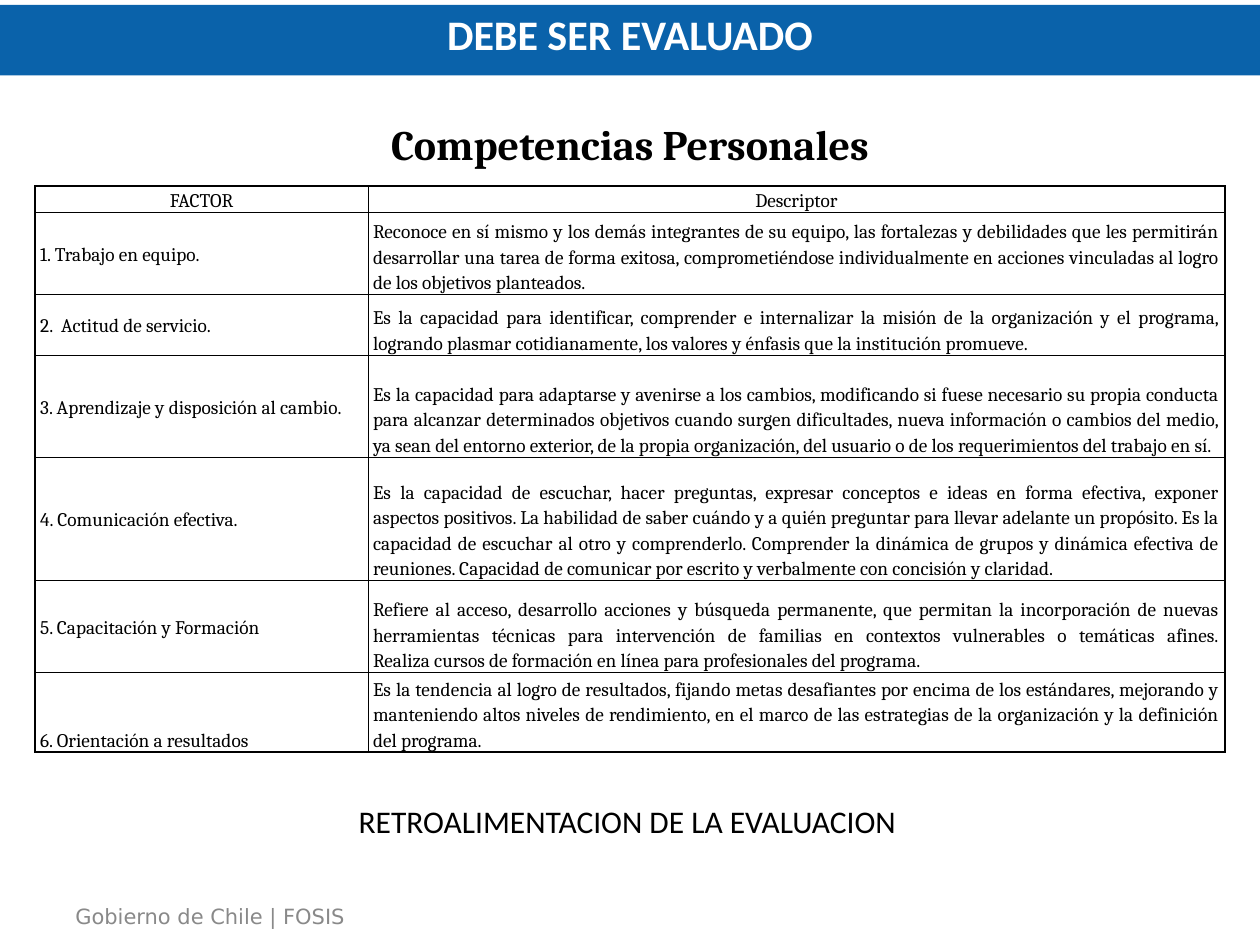
"""Build the slide of personal competencies to be evaluated."""
import copy
import dataclasses

import lxml.etree
import pptx
import pptx.dml.color
import pptx.enum.shapes
import pptx.enum.text
import pptx.oxml.ns
import pptx.util

Cm = pptx.util.Cm
Align = pptx.enum.text.PP_ALIGN
Anchor = pptx.enum.text.MSO_ANCHOR
qualified = pptx.oxml.ns.qn


@dataclasses.dataclass(frozen=True)
class Theme:
    black: str = "000000"
    white: str = "FFFFFF"
    blue: str = "0A62AA"
    gray: str = "898989"
    serif: str = "Cambria"
    sans: str = "Calibri"
    footer_font: str = "DejaVu Sans"
    heading_size: float = 24
    note_size: float = 18
    footer_size: float = 12
    table_size: float = 11
    thick_line: float = 1
    thin_line: float = 0.5


@dataclasses.dataclass(frozen=True)
class Box:
    left: float
    top: float
    width: float
    height: float

    def lengths(self) -> list:
        return [Cm(value) for value in dataclasses.astuple(self)]


@dataclasses.dataclass(frozen=True)
class Competency:
    factor: str
    descriptor: str
    height: float
    factor_align: Align = Align.JUSTIFY
    factor_anchor: Anchor = Anchor.MIDDLE
    descriptor_align: Align = Align.JUSTIFY


THEME = Theme()
COLUMN_WIDTHS = (6.71, 17.27)
THICK_RULES = (0, 1, 6, 7)
COMPETENCIES = (
    Competency("FACTOR", "Descriptor", 0.46, Align.CENTER, Anchor.BOTTOM, Align.CENTER),
    Competency(
        "1. Trabajo en equipo.",
        "Reconoce en sí mismo y los demás integrantes de su equipo, las fortalezas y debilidades "
        "que les permitirán desarrollar una tarea de forma exitosa, comprometiéndose "
        "individualmente en acciones vinculadas al logro de los objetivos planteados.", 1.65),
    Competency(
        "2.  Actitud de servicio.",
        "Es la capacidad para identificar, comprender e internalizar la misión de la organización "
        "y el programa, logrando plasmar cotidianamente, los valores y énfasis que la institución "
        "promueve.", 1.22),
    Competency(
        "3. Aprendizaje y disposición al cambio.",
        "Es la capacidad para adaptarse y avenirse a los cambios, modificando si fuese necesario "
        "su propia conducta para alcanzar determinados objetivos cuando surgen dificultades, nueva "
        "información o cambios del medio, ya sean del entorno exterior, de la propia organización, "
        "del usuario o de los requerimientos del trabajo en sí.", 2.06),
    Competency(
        "4. Comunicación efectiva.",
        "Es la capacidad de escuchar, hacer preguntas, expresar conceptos e ideas en forma "
        "efectiva, exponer aspectos positivos. La habilidad de saber cuándo y a quién preguntar "
        "para llevar adelante un propósito. Es la capacidad de escuchar al otro y comprenderlo. "
        "Comprender la dinámica de grupos y dinámica efectiva de reuniones. Capacidad de comunicar "
        "por escrito y verbalmente con concisión y claridad.", 2.49),
    Competency(
        "5. Capacitación y Formación",
        "Refiere al acceso, desarrollo acciones y búsqueda permanente, que permitan la "
        "incorporación de nuevas herramientas técnicas para intervención de familias en contextos "
        "vulnerables o temáticas afines.\n"
        "Realiza cursos de formación en línea para profesionales del programa.", 1.85),
    Competency(
        "6. Orientación a resultados",
        "Es la tendencia al logro de resultados, fijando metas desafiantes por encima de los "
        "estándares, mejorando y manteniendo altos niveles de rendimiento, en el marco de las "
        "estrategias de la organización y la definición del programa.", 1.5,
        Align.LEFT, Anchor.BOTTOM),
)


def write_text(frame, text: str, *, font: str, size: float, color: str = THEME.black,
               bold: bool = False, align: Align = Align.LEFT, spacing: float = 1.0) -> None:
    paragraph = frame.paragraphs[0]
    paragraph.text = text
    paragraph.alignment = align
    paragraph.line_spacing = spacing
    for run in paragraph.runs:
        run.font.name = font
        run.font.size = pptx.util.Pt(size)
        run.font.bold = bold
        run.font.color.rgb = pptx.dml.color.RGBColor.from_string(color)
    for line_break in paragraph._p.findall(qualified("a:br")):
        line_break.append(copy.deepcopy(paragraph.runs[0]._r.rPr))


def add_text_box(slide, box: Box, text: str, *, wrap: bool = False,
                 anchor: Anchor = Anchor.TOP, **text_format) -> None:
    frame = slide.shapes.add_textbox(*box.lengths()).text_frame
    frame.word_wrap = wrap
    frame.vertical_anchor = anchor
    write_text(frame, text, **text_format)


def add_banner(slide, box: Box, text: str) -> None:
    shape = slide.shapes.add_shape(pptx.enum.shapes.MSO_SHAPE.RECTANGLE, *box.lengths())
    shape.shadow.inherit = False
    shape.fill.solid()
    shape.fill.fore_color.rgb = pptx.dml.color.RGBColor.from_string(THEME.blue)
    shape.line.fill.background()
    frame = shape.text_frame
    frame.word_wrap = True
    frame.vertical_anchor = Anchor.TOP
    frame.margin_left = frame.margin_right = Cm(0.15)
    frame.margin_top = frame.margin_bottom = Cm(0.08)
    write_text(frame, text, font=THEME.sans, size=THEME.heading_size, color=THEME.white,
               bold=True, align=Align.CENTER)


def set_borders(cell, row: int, column: int) -> None:
    properties = cell._tc.get_or_add_tcPr()
    thick_edges = {"lnL": column == 0, "lnR": column == 1,
                   "lnT": row in THICK_RULES, "lnB": row + 1 in THICK_RULES}
    for edge, thick in thick_edges.items():
        width = pptx.util.Pt(THEME.thick_line if thick else THEME.thin_line)
        line = lxml.etree.SubElement(properties, qualified(f"a:{edge}"), w=str(int(width)))
        fill = lxml.etree.SubElement(line, qualified("a:solidFill"))
        lxml.etree.SubElement(fill, qualified("a:srgbClr"), val=THEME.black)


def fill_cell(table, row: int, column: int, text: str, align: Align, anchor: Anchor) -> None:
    cell = table.cell(row, column)
    set_borders(cell, row, column)
    cell.fill.background()
    cell.margin_left = cell.margin_right = Cm(0.1)
    cell.margin_top = cell.margin_bottom = 0
    cell.vertical_anchor = anchor
    write_text(cell.text_frame, text, font=THEME.serif, size=THEME.table_size,
               align=align, spacing=1.15)


def add_competency_table(slide, left: float, top: float) -> None:
    box = Box(left, top, sum(COLUMN_WIDTHS), sum(item.height for item in COMPETENCIES))
    table = slide.shapes.add_table(len(COMPETENCIES), len(COLUMN_WIDTHS), *box.lengths()).table
    table.first_row = table.horz_banding = False
    for column, width in zip(table.columns, COLUMN_WIDTHS):
        column.width = Cm(width)
    for row, item in enumerate(COMPETENCIES):
        table.rows[row].height = Cm(item.height)
        fill_cell(table, row, 0, item.factor, item.factor_align, item.factor_anchor)
        fill_cell(table, row, 1, item.descriptor, item.descriptor_align, Anchor.BOTTOM)


def main() -> None:
    presentation = pptx.Presentation()
    presentation.slide_width, presentation.slide_height = Cm(25.4), Cm(19.05)
    slide = presentation.slides.add_slide(presentation.slide_layouts[6])
    add_text_box(slide, Box(1.27, 18.08, 6.17, 0.76), "Gobierno de Chile | FOSIS",
                 font=THEME.footer_font, size=THEME.footer_size, color=THEME.gray)
    add_text_box(slide, Box(1.75, 2.03, 21.9, 1.73), "Competencias Personales", wrap=True,
                 anchor=Anchor.MIDDLE, font=THEME.serif, size=THEME.heading_size, bold=True,
                 align=Align.CENTER)
    add_competency_table(slide, 0.71, 3.75)
    add_banner(slide, Box(0, 0.1, 25.4, 1.42), "DEBE SER EVALUADO")
    add_text_box(slide, Box(6.98, 16.05, 11.46, 1.02), "RETROALIMENTACION DE LA EVALUACION",
                 font=THEME.sans, size=THEME.note_size)
    presentation.save("out.pptx")


if __name__ == "__main__":
    main()
